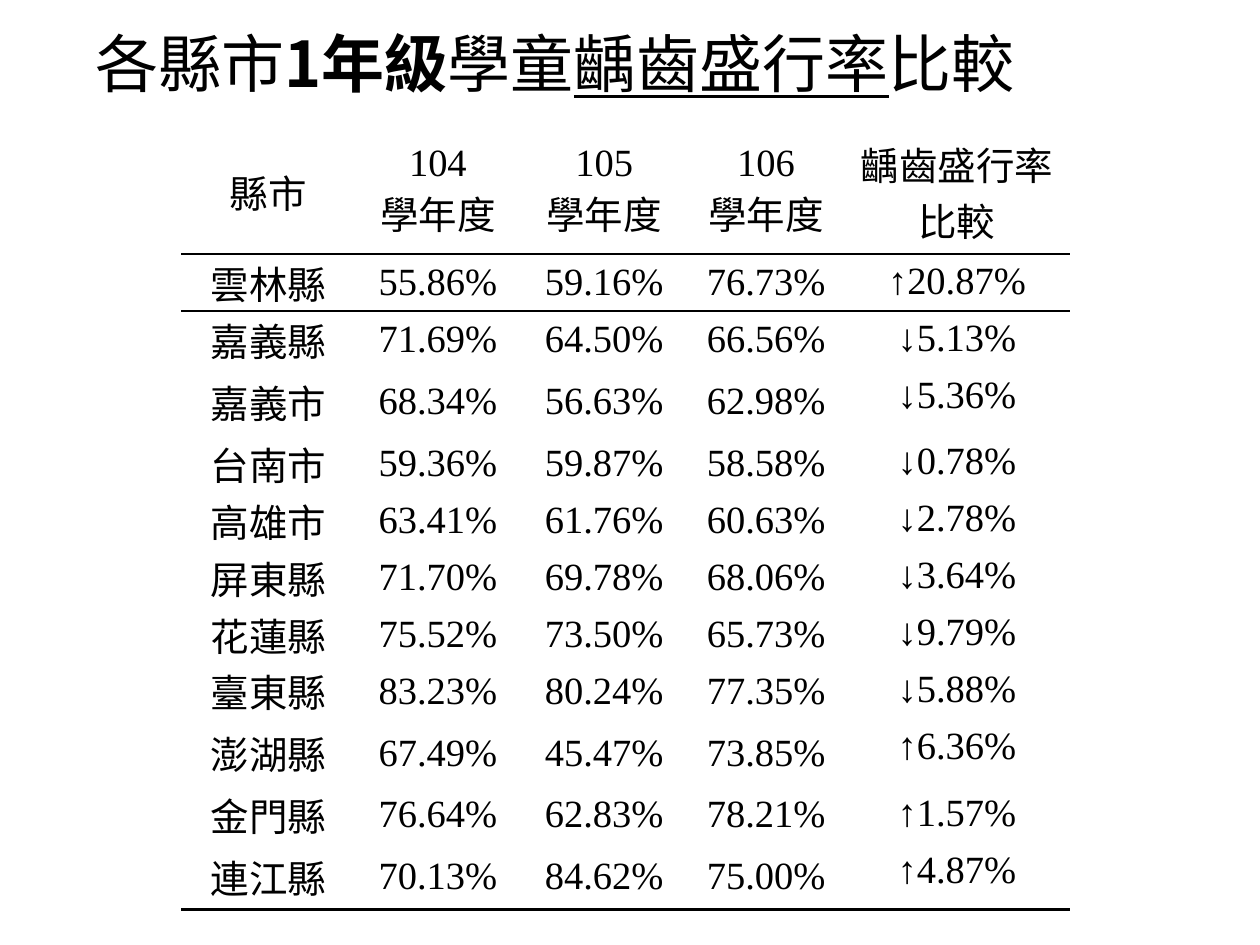
from dataclasses import dataclass

from lxml.etree import SubElement
from pptx import Presentation
from pptx.dml.color import RGBColor
from pptx.enum.text import MSO_ANCHOR, MSO_AUTO_SIZE, PP_ALIGN
from pptx.oxml import parse_xml
from pptx.oxml.ns import nsdecls, qn
from pptx.util import Inches, Pt


@dataclass(frozen=True)
class Theme:
    """Colours, fonts and sizes of the slide."""
    ink: str = "000000"
    paper: str = "FFFFFF"
    latin: str = "Times New Roman"
    cjk: str = "Noto Sans CJK SC"
    title_size: int = 36
    cell_size: int = 22
    rule: float = 1.5


THEME = Theme()
NO_STYLE = "{2D5ABB26-0587-4C30-8999-92F81FD0307C}"
TITLE = [
    ("各縣市", {}),
    ("1年級", {"bold": True}),
    ("學童", {}),
    ("齲齒盛行率", {"underline": True}),
    ("比較", {}),
]
HEADER = ["縣市", "104\n學年度", "105\n學年度", "106\n學年度", "齲齒盛行率\n比較"]
RATES = [
    ("雲林縣", "55.86%", "59.16%", "76.73%", "↑20.87%"),
    ("嘉義縣", "71.69%", "64.50%", "66.56%", "↓5.13%"),
    ("嘉義市", "68.34%", "56.63%", "62.98%", "↓5.36%"),
    ("台南市", "59.36%", "59.87%", "58.58%", "↓0.78%"),
    ("高雄市", "63.41%", "61.76%", "60.63%", "↓2.78%"),
    ("屏東縣", "71.70%", "69.78%", "68.06%", "↓3.64%"),
    ("花蓮縣", "75.52%", "73.50%", "65.73%", "↓9.79%"),
    ("臺東縣", "83.23%", "80.24%", "77.35%", "↓5.88%"),
    ("澎湖縣", "67.49%", "45.47%", "73.85%", "↑6.36%"),
    ("金門縣", "76.64%", "62.83%", "78.21%", "↑1.57%"),
    ("連江縣", "70.13%", "84.62%", "75.00%", "↑4.87%"),
]
COLUMNS = [1.38, 1.31, 1.33, 1.24, 1.79]
HEADER_HEIGHT, ROW_HEIGHT, TALL_HEIGHT = 0.81, 0.45, 0.53
TALL_ROWS = {"嘉義市", "澎湖縣", "連江縣"}


def add_text(p, text, *, size, font, bold=False, underline=False):
    """Append a formatted run to a paragraph."""
    r = p.add_run()
    r.text = text
    r.font.size = Pt(size)
    r.font.name = font
    r.font.bold = bold
    r.font.underline = underline
    r.font.color.rgb = RGBColor.from_string(THEME.ink)
    SubElement(r.font._element, qn("a:ea")).set("typeface", THEME.cjk)


def add_title(s):
    """Place the title and write its runs."""
    sp = s.shapes.title
    sp.left, sp.top, sp.width, sp.height = map(Inches, (0.66, 0.01, 8.62, 1.04))
    tf = sp.text_frame
    tf.word_wrap = True
    tf.auto_size = MSO_AUTO_SIZE.NONE
    tf.vertical_anchor = MSO_ANCHOR.MIDDLE
    p = tf.paragraphs[0]
    p.alignment = PP_ALIGN.LEFT
    p.line_spacing = 0.9
    for text, style in TITLE:
        add_text(p, text, size=THEME.title_size, font=THEME.cjk, **style)


def add_border(cell, side):
    """Rule one side of a cell, "T" or "B"."""
    cell._tc.get_or_add_tcPr().insert(0, parse_xml(
        f'<a:ln{side} {nsdecls("a")} w="{Pt(THEME.rule)}"><a:solidFill>'
        f'<a:srgbClr val="{THEME.ink}"/></a:solidFill></a:ln{side}>'))


def fill_cell(cell, text, *, middle, tight):
    """Write centred lines in a plain cell."""
    cell.fill.solid()
    cell.fill.fore_color.rgb = RGBColor.from_string(THEME.paper)
    cell.vertical_anchor = MSO_ANCHOR.MIDDLE if middle else MSO_ANCHOR.TOP
    if tight:
        cell.margin_left = cell.margin_right = cell.margin_top = Inches(0.01)
        cell.margin_bottom = 0
    tf = cell.text_frame
    for i, line in enumerate(text.split("\n")):
        p = tf.add_paragraph() if i else tf.paragraphs[0]
        p.alignment = PP_ALIGN.CENTER
        add_text(p, line, size=THEME.cell_size, font=THEME.latin)


def add_rates(s):
    """Build the table of rates by county and school year."""
    rows = [HEADER, *RATES]
    frame = s.shapes.add_table(len(rows), len(COLUMNS), Inches(1.44), Inches(1.03),
                               Inches(sum(COLUMNS)), Inches(6.16))
    table = frame.table
    table.first_row = table.horz_banding = False
    table._tbl.tblPr.find(qn("a:tableStyleId")).text = NO_STYLE
    for column, width in zip(table.columns, COLUMNS):
        column.width = Inches(width)
    for i, row in enumerate(rows):
        height = TALL_HEIGHT if row[0] in TALL_ROWS else ROW_HEIGHT
        table.rows[i].height = Inches(height if i else HEADER_HEIGHT)
        for j, text in enumerate(row):
            cell = table.cell(i, j)
            inner = j < len(COLUMNS) - 1
            fill_cell(cell, text, middle=inner, tight=inner and i > 0)
            if i == 1:
                add_border(cell, "T")
            if i in (0, len(rows) - 1):
                add_border(cell, "B")
    frame.height = Inches(6.16)


def main():
    """Build and save the slide."""
    prs = Presentation()
    prs.slide_width, prs.slide_height = Inches(10), Inches(7.5)
    s = prs.slides.add_slide(prs.slide_layouts[5])
    add_title(s)
    add_rates(s)
    prs.save("out.pptx")


if __name__ == "__main__":
    main()
